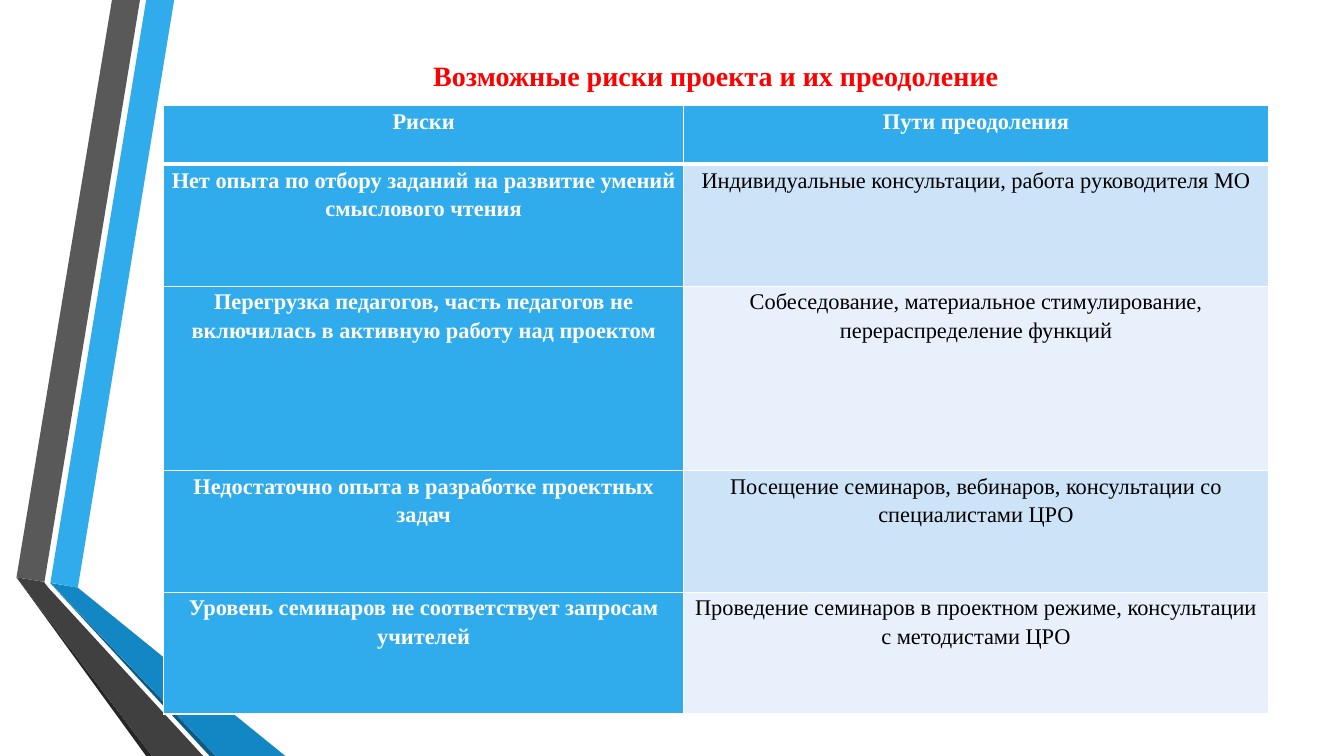
from dataclasses import dataclass

from lxml.etree import SubElement
from pptx import Presentation
from pptx.dml.color import RGBColor
from pptx.enum.text import MSO_ANCHOR as Anchor, PP_ALIGN as Align
from pptx.oxml.ns import qn
from pptx.util import Pt


@dataclass(frozen=True)
class Theme:
    font: str = "Times New Roman"
    title_size: int = 20
    cell_size: int = 16
    title: str = "FF0000"
    blue: str = "30ACEC"
    blue_fold: str = "1287C3"
    blue_edge: str = "0C5A82"
    gray: str = "595959"
    gray_fold: str = "404040"
    gray_edge: str = "262626"
    bands: tuple = ("CDE3F8", "E8F1FB")
    light: str = "FFFFFF"
    dark: str = "000000"


class SlideBuilder:
    def __init__(self, slide, theme):
        self.slide = slide
        self.theme = theme

    def style(self, paragraph, size, color, bold):
        paragraph.alignment = Align.CENTER
        font = paragraph.font
        font.name, font.size, font.bold = self.theme.font, Pt(size), bold
        font.color.rgb = RGBColor.from_string(color)

    def title(self, text, left, top, width, height):
        shape = self.slide.shapes.title
        shape.left, shape.top = Pt(left), Pt(top)
        shape.width, shape.height = Pt(width), Pt(height)
        frame = shape.text_frame
        frame.text = text
        frame.word_wrap = True
        frame.vertical_anchor = Anchor.MIDDLE
        frame.margin_top = frame.margin_bottom = 0
        self.style(frame.paragraphs[0], self.theme.title_size, self.theme.title, True)

    def polygon(self, points, color):
        start, *others = [(Pt(x), Pt(y)) for x, y in points]
        builder = self.slide.shapes.build_freeform(*start)
        builder.add_line_segments(others, close=True)
        shape = builder.convert_to_shape()
        shape.shadow.inherit = False
        shape.fill.solid()
        shape.fill.fore_color.rgb = RGBColor.from_string(color)
        shape.line.fill.background()

    def table(self, rows, left, top, column_widths, row_heights):
        """Draw a table whose first row and first column are headings."""
        theme = self.theme
        table = self.slide.shapes.add_table(
            len(rows), len(column_widths), Pt(left), Pt(top),
            Pt(sum(column_widths)), Pt(sum(row_heights))).table
        table.first_col = True
        for column, width in zip(table.columns, column_widths):
            column.width = Pt(width)
        for row, height in zip(table.rows, row_heights):
            row.height = Pt(height)
        for i, texts in enumerate(rows):
            for j, text in enumerate(texts):
                heading = i == 0 or j == 0
                fill = theme.blue if heading else theme.bands[(i - 1) % 2]
                color = theme.light if heading else theme.dark
                self.cell(table.cell(i, j), text, fill, color, heading)
                self.borders(table.cell(i, j), top=3 if i == 1 else 1,
                             bottom=3 if i == 0 else 1)

    def cell(self, cell, text, fill, color, bold):
        cell.text = text
        cell.margin_left = cell.margin_right = Pt(5)
        cell.margin_top = cell.margin_bottom = 0
        cell.fill.solid()
        cell.fill.fore_color.rgb = RGBColor.from_string(fill)
        paragraph = cell.text_frame.paragraphs[0]
        paragraph.line_spacing = 1.15
        self.style(paragraph, self.theme.cell_size, color, bold)

    def borders(self, cell, top, bottom):
        properties = cell._tc.get_or_add_tcPr()
        sides = (("a:lnL", 1), ("a:lnR", 1), ("a:lnT", top), ("a:lnB", bottom))
        for position, (tag, width) in enumerate(sides):
            line = SubElement(properties, qn(tag), w=str(Pt(width)))
            fill = SubElement(line, qn("a:solidFill"))
            SubElement(fill, qn("a:srgbClr"), val=self.theme.light)
            properties.insert(position, line)  # borders precede the cell fill


def main():
    theme = Theme()
    presentation = Presentation()
    presentation.slide_width, presentation.slide_height = Pt(960), Pt(540)
    slide = presentation.slides.add_slide(presentation.slide_layouts[5])
    builder = SlideBuilder(slide, theme)

    ribbons = [
        (theme.blue, [(36, 416.2), (55.6, 419.8), (124.4, 0), (104.4, 0)]),
        (theme.gray, [(100, 0), (80, 0), (11.8, 412.4), (31.8, 415.6)]),
        (theme.gray_edge, [(11.8, 412.4), (104.4, 540), (108.6, 540)]),
        (theme.blue_edge, [(36, 416.6), (149.8, 540), (154.2, 540)]),
        (theme.blue_fold, [(36, 416.4), (154.2, 540), (203.8, 540), (55.6, 419.8)]),
        (theme.gray_fold, [(145.2, 540), (34.6, 419.8), (31.4, 415.6),
                           (11.8, 412.4), (108.6, 540)]),
    ]
    for color, points in ribbons:
        builder.polygon(points, color)

    left, column_widths = 116.8, (371.6, 417.6)
    builder.title("Возможные риски проекта и их преодоление",
                  left, 43, sum(column_widths), 21)
    rows = [
        ("Риски", "Пути преодоления"),
        ("Нет опыта по отбору заданий на развитие умений смыслового чтения",
         "Индивидуальные консультации, работа руководителя МО"),
        ("Перегрузка педагогов, часть педагогов не включилась в активную "
         "работу над проектом",
         "Собеседование, материальное стимулирование, перераспределение функций"),
        ("Недостаточно опыта в разработке проектных задач",
         "Посещение семинаров, вебинаров, консультации со специалистами ЦРО"),
        ("Уровень семинаров не соответствует запросам учителей",
         "Проведение семинаров в проектном режиме, консультации с методистами ЦРО"),
    ]
    builder.table(rows, left, 75.2, column_widths, (42.2, 87, 131.6, 87, 87))
    presentation.save("out.pptx")


if __name__ == "__main__":
    main()
